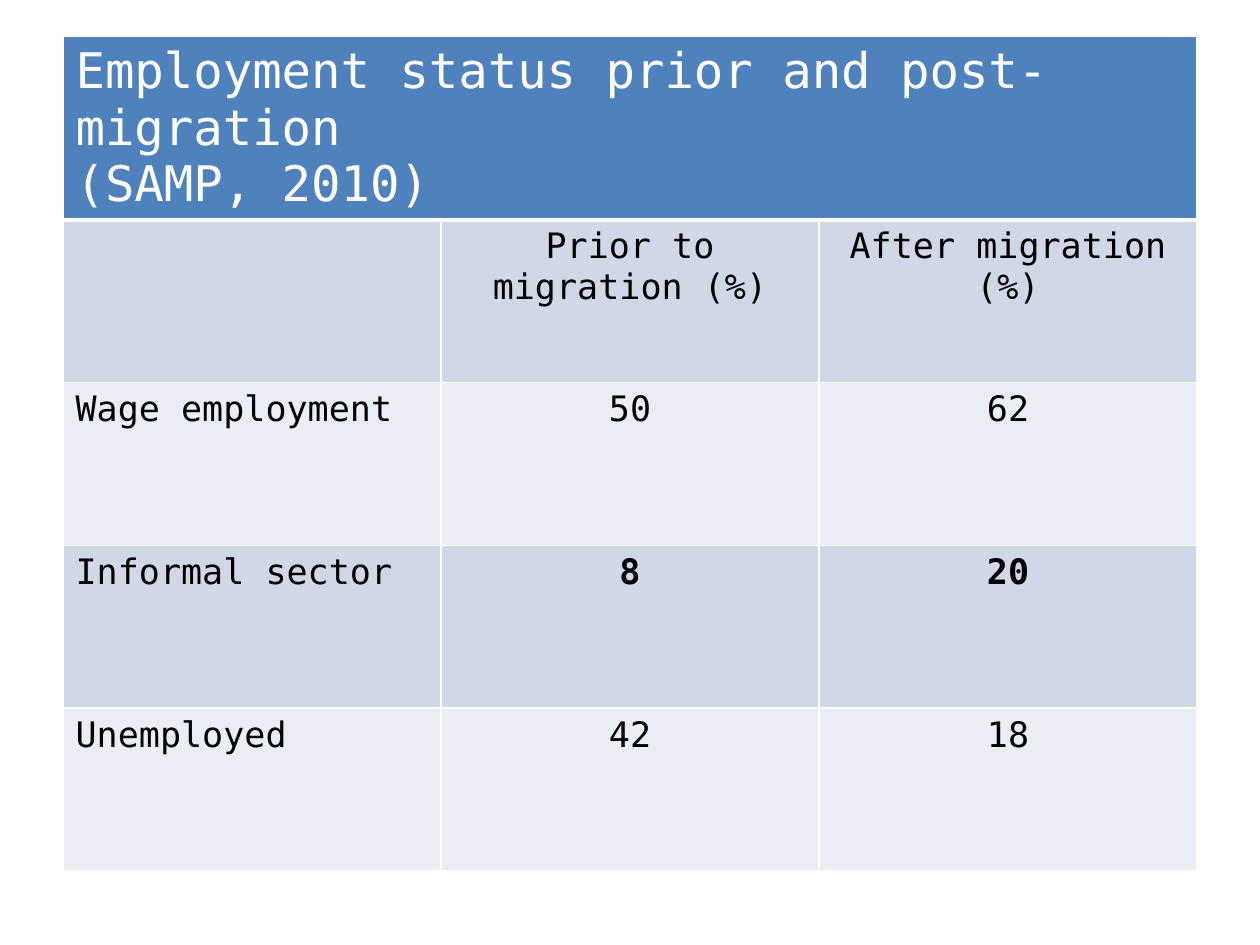
import pptx
import pptx.dml.color
import pptx.enum.text
import pptx.oxml.ns
import pptx.util
from lxml import etree

Inches = pptx.util.Inches
Pt = pptx.util.Pt
RGBColor = pptx.dml.color.RGBColor
PP_ALIGN = pptx.enum.text.PP_ALIGN
qn = pptx.oxml.ns.qn

FONT = "DejaVu Sans Mono"
WHITE = RGBColor(0xFF, 0xFF, 0xFF)
BLACK = RGBColor(0x00, 0x00, 0x00)
BLUE = RGBColor(0x4F, 0x81, 0xBD)
BAND_DARK = RGBColor(0xD0, 0xD8, 0xE8)
BAND_LIGHT = RGBColor(0xE9, 0xED, 0xF4)

HEADING = "Employment status prior and post-migration\n(SAMP, 2010)"
ROWS = [
    ("", "Prior to migration (%)", "After migration (%)"),
    ("Wage employment", "50", "62"),
    ("Informal sector", "8", "20"),
    ("Unemployed", "42", "18"),
]
BOLD_VALUES = ("8", "20")


def set_borders(cell, top=1, bottom=1):
    tcPr = cell._tc.get_or_add_tcPr()
    for side, width in (("L", 1), ("R", 1), ("T", top), ("B", bottom)):
        ln = etree.SubElement(tcPr, qn(f"a:ln{side}"), w=str(Pt(width)))
        fill = etree.SubElement(ln, qn("a:solidFill"))
        etree.SubElement(fill, qn("a:srgbClr"), val=str(WHITE))


def set_fill(cell, color):
    cell.fill.solid()
    cell.fill.fore_color.rgb = color


def set_text(cell, text, size, color, align=PP_ALIGN.LEFT, bold=False):
    cell.text_frame.text = text
    for p in cell.text_frame.paragraphs:
        p.alignment = align
        for r in p.runs:
            r.font.name = FONT
            r.font.size = Pt(size)
            r.font.bold = bold
            r.font.color.rgb = color


def add_heading(table):
    for cell in table.rows[0].cells:
        set_borders(cell, bottom=3)
        set_fill(cell, BLUE)
    table.cell(0, 0).merge(table.cell(0, 2))
    set_text(table.cell(0, 0), HEADING, 28, WHITE)


def add_body(table):
    for i, row in enumerate(ROWS, start=1):
        for j, text in enumerate(row):
            cell = table.cell(i, j)
            set_borders(cell, top=3 if i == 1 else 1)
            set_fill(cell, BAND_DARK if i % 2 else BAND_LIGHT)
            align = PP_ALIGN.CENTER if j else PP_ALIGN.LEFT
            set_text(cell, text, 20, BLACK, align, text in BOLD_VALUES)


def add_employment_table(s):
    frame = s.shapes.add_table(len(ROWS) + 1, 3, Inches(0.5), Inches(0.29),
                               Inches(9), Inches(6.46))
    table = frame.table
    table.horz_banding = False
    add_heading(table)
    add_body(table)


def main():
    prs = pptx.Presentation()
    prs.slide_width = Inches(10)
    prs.slide_height = Inches(7.5)
    s = prs.slides.add_slide(prs.slide_layouts[6])
    add_employment_table(s)
    prs.save("out.pptx")


if __name__ == "__main__":
    main()
